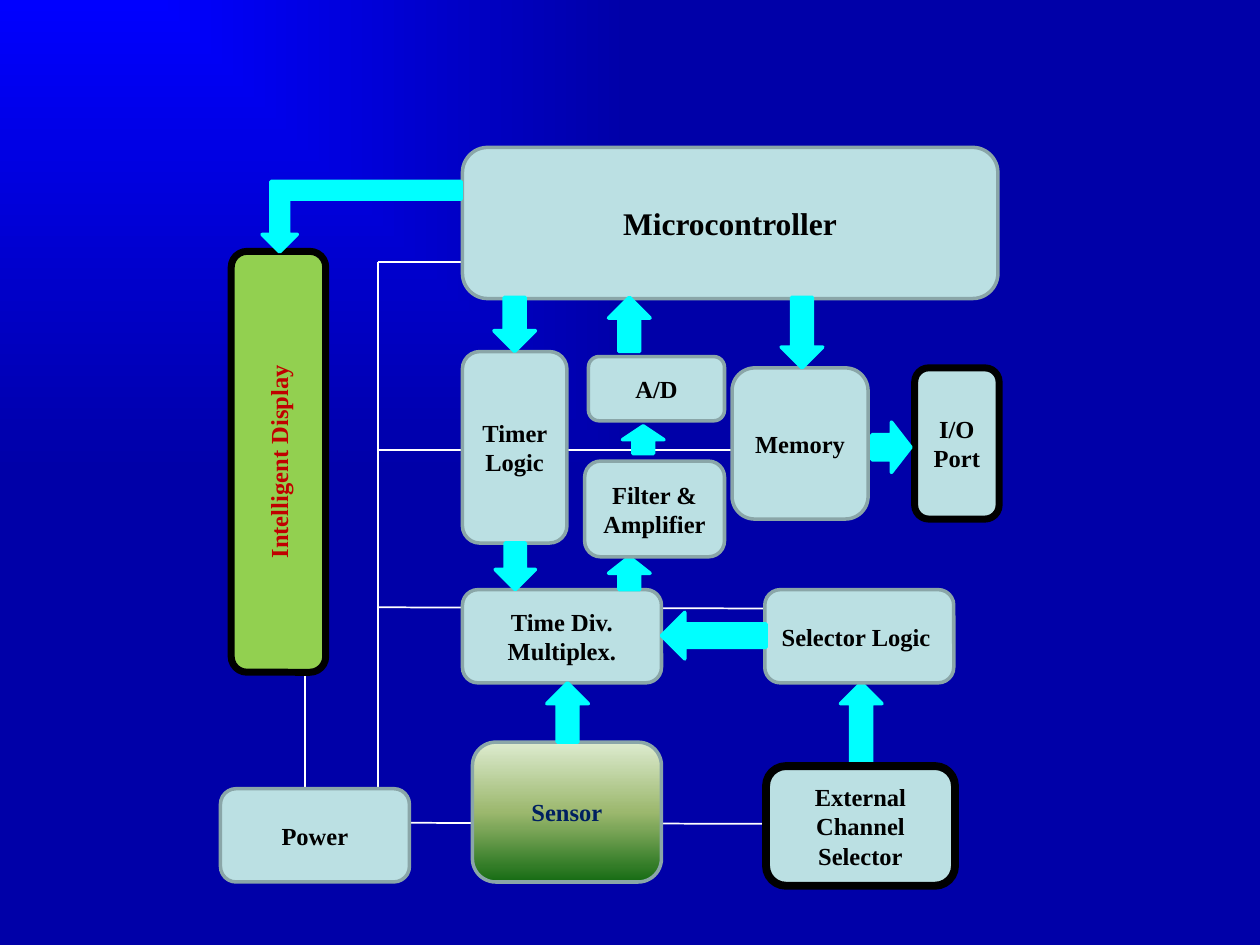
from lxml import etree
from pptx import Presentation, util as u
from pptx.dml.color import RGBColor
from pptx.enum import shapes as sh, text as tx
from pptx.oxml import parse_xml
from pptx.oxml.ns import nsdecls, qn

FONT = "Times New Roman"
PALE, EDGE, BLACK, WHITE, CYAN = "BBE0E3", "8AA6A8", "000000", "FFFFFF", "00FFFF"
BACKDROP = [(0, "0000FF"), (100, "0000A8")]
SENSOR_GREENS = [(0, "DDEBCF"), (50, "9CB86E"), (100, "156B13")]
CORNER_SPREAD = '<a:path {} path="rect"><a:fillToRect r="100000" b="100000"/></a:path>'
TOP_DOWN = '<a:lin {} ang="5400000" scaled="0"/>'

BUS = 3.0
POWER_LINES = [
    (2.42, 5.08, 2.42, 6.33),
    (BUS, 2.08, BUS, 6.63),
    (3.17, 6.53, 6.42, 6.54),
    (BUS, 4.82, 6.25, 4.83),
    (BUS, 3.57, 5.8, 3.57),
    (BUS, 2.08, 3.83, 2.08),
]

# label, (left, top, width, height), options that differ from the usual block
BLOCKS = [
    ("Power", (1.75, 6.26, 1.5, 0.74), {}),
    ("Sensor", (3.75, 5.89, 1.5, 1.11), {"stops": SENSOR_GREENS, "ink": "002060"}),
    ("Time Div. Multiplex.", (3.67, 4.68, 1.58, 0.74), {}),
    ("A/D", (4.67, 2.83, 1.08, 0.51), {}),
    ("Timer Logic", (3.67, 2.79, 0.83, 1.52), {}),
    ("Microcontroller", (3.67, 1.17, 4.25, 1.2), {"size": 18}),
    ("External Channel Selector", (6.08, 6.08, 1.5, 0.95), {"edge": BLACK, "weight": 4.5}),
    ("Selector Logic ", (6.07, 4.68, 1.5, 0.74), {}),
    ("Memory", (5.81, 2.92, 1.08, 1.2), {}),
    ("I/O Port", (7.26, 2.92, 0.67, 1.2), {"edge": BLACK, "weight": 4}),
    ("Intelligent Display", (0.54, 3.29, 3.34, 0.75),
     {"fill": "92D050", "ink": "C00000", "edge": BLACK, "weight": 4, "turn": 270}),
]
FILTER_BLOCK = ("Filter & Amplifier", (4.64, 3.66, 1.11, 0.76), {})

CHANNEL_ARROW = ("UP_ARROW", (6.67, 5.42, 0.33, 0.74), 0)
# preset, (left, top, width, height), rotation
SIGNAL_ARROWS = [
    ("UP_ARROW", (4.34, 5.42, 0.33, 0.47), 0),
    ("UP_ARROW", (4.83, 4.42, 0.33, 0.26), 0),
    ("DOWN_ARROW", (3.93, 4.31, 0.32, 0.37), 0),
    ("UP_ARROW", (4.83, 2.36, 0.33, 0.43), 0),
    ("DOWN_ARROW", (3.92, 2.36, 0.33, 0.43), 0),
    ("DOWN_ARROW", (6.2, 2.36, 0.33, 0.56), 0),
    ("RIGHT_ARROW", (6.92, 3.35, 0.31, 0.4), 0),
    ("LEFT_ARROW", (5.25, 4.86, 0.83, 0.37), 0),
    ("BENT_UP_ARROW", (2.08, 1.44, 1.58, 0.56), 180),
    ("UP_ARROW", (4.94, 3.38, 0.33, 0.22), 0),
]


def rgb(code):
    return RGBColor.from_string(code)


def set_gradient(fill, owner, stops, direction):
    """Give fill, which lives inside the XML element owner, its own stops and direction."""
    fill.gradient()
    gradient = owner.find(".//" + qn("a:gradFill"))
    for child in list(gradient):
        gradient.remove(child)
    stop_list = etree.SubElement(gradient, qn("a:gsLst"))
    for percent, code in stops:
        stop = etree.SubElement(stop_list, qn("a:gs"), pos=str(percent * 1000))
        etree.SubElement(stop, qn("a:srgbClr"), val=code)
    gradient.append(parse_xml(direction.format(nsdecls("a"))))


def add_outlined(slide, preset, box, fill, edge, weight, turn):
    part = slide.shapes.add_shape(getattr(sh.MSO_SHAPE, preset), *map(u.Inches, box))
    part.rotation = turn
    part.shadow.inherit = False
    part.fill.solid()
    part.fill.fore_color.rgb = rgb(fill)
    part.line.color.rgb = rgb(edge)
    part.line.width = u.Pt(weight)
    return part


def add_block(slide, label, box, options):
    block = add_outlined(slide, "ROUNDED_RECTANGLE", box, options.get("fill", PALE),
                         options.get("edge", EDGE), options.get("weight", 2),
                         options.get("turn", 0))
    if "stops" in options:
        set_gradient(block.fill, block._element.spPr, options["stops"], TOP_DOWN)
    frame = block.text_frame
    frame.word_wrap = True
    frame.vertical_anchor = tx.MSO_ANCHOR.MIDDLE
    paragraph = frame.paragraphs[0]
    paragraph.alignment = tx.PP_ALIGN.CENTER
    run = paragraph.add_run()
    run.text = label
    run.font.name = FONT
    run.font.size = u.Pt(options.get("size", 14))
    run.font.bold = True
    run.font.color.rgb = rgb(options.get("ink", BLACK))


def add_arrow(slide, preset, box, turn):
    add_outlined(slide, preset, box, CYAN, CYAN, 2, turn)


def add_power_line(slide, ends):
    wire = slide.shapes.add_connector(sh.MSO_CONNECTOR.STRAIGHT, *map(u.Inches, ends))
    wire.line.color.rgb = rgb(WHITE)
    wire.line.width = u.Pt(1)
    etree.SubElement(wire._element.spPr, qn("a:effectLst"))


def main():
    deck = Presentation()
    deck.slide_width, deck.slide_height = u.Inches(10), u.Inches(7.5)
    slide = deck.slides.add_slide(deck.slide_layouts[6])
    set_gradient(slide.background.fill, slide._element, BACKDROP, CORNER_SPREAD)

    for ends in POWER_LINES:
        add_power_line(slide, ends)
    add_arrow(slide, *CHANNEL_ARROW)
    for block in BLOCKS:
        add_block(slide, *block)
    for arrow in SIGNAL_ARROWS:
        add_arrow(slide, *arrow)
    add_block(slide, *FILTER_BLOCK)
    deck.save("out.pptx")


if __name__ == "__main__":
    main()
